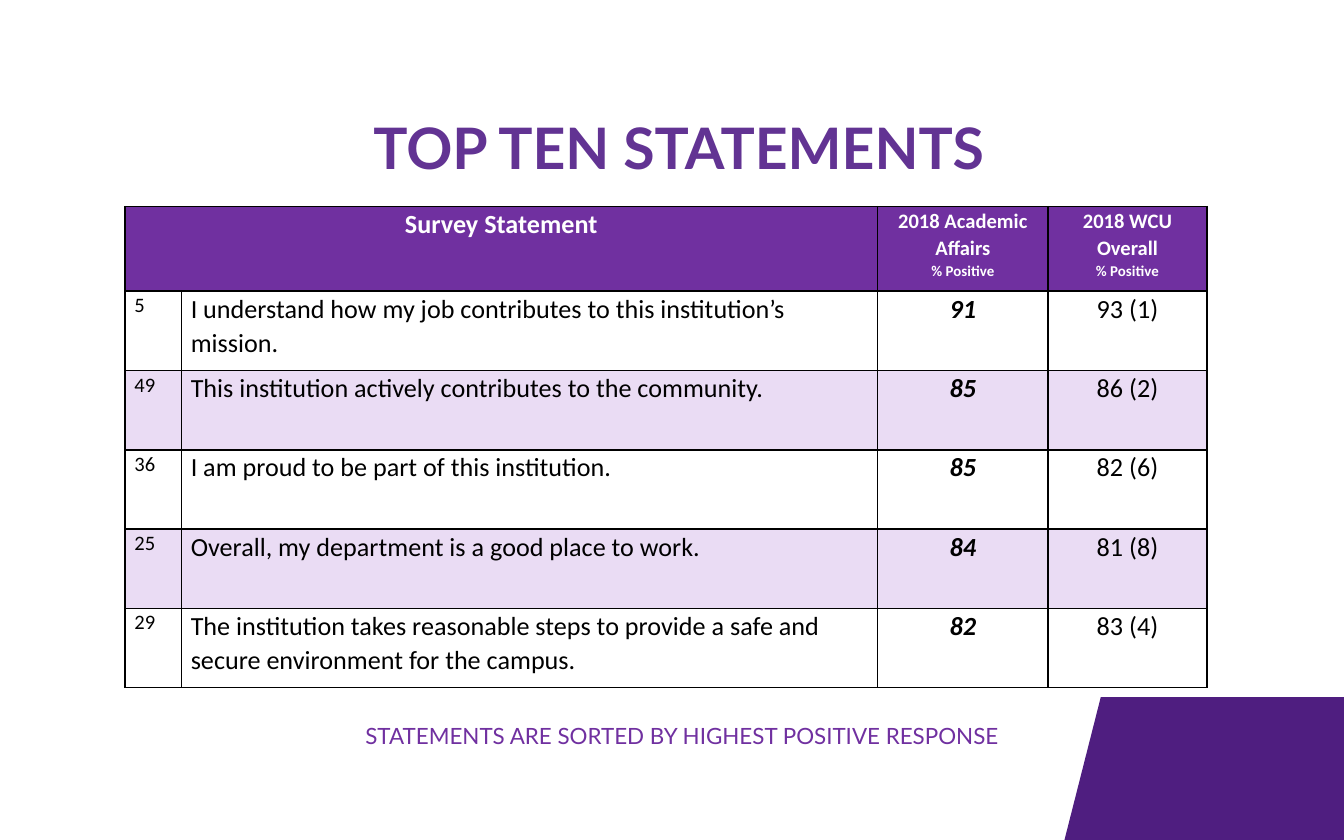
from lxml.etree import SubElement
from pptx import Presentation
from pptx.dml.color import RGBColor
from pptx.enum.text import MSO_ANCHOR, PP_ALIGN
from pptx.oxml.ns import qn
from pptx.util import Inches, Pt

WIDTH, HEIGHT = Inches(10), Inches(6.25)
COLUMN_WIDTHS = (0.42, 5.18, 1.27, 1.18)
HEADER_HEIGHT, ROW_HEIGHT = 0.63, 0.59
PURPLE, LILAC, WHITE, BLACK = "7030A0", "EADCF4", "FFFFFF", "000000"
SCORE_HEADINGS = ("2018 Academic Affairs", "2018 WCU Overall")
STATEMENTS = (
    ("5", "I understand how my job contributes to this institution’s mission.", "91", "93 (1)"),
    ("49", "This institution actively contributes to the community.", "85", "86 (2)"),
    ("36", "I am proud to be part of this institution.", "85", "82 (6)"),
    ("25", "Overall, my department is a good place to work.", "84", "81 (8)"),
    ("29", "The institution takes reasonable steps to provide a safe and secure environment for the campus.",
     "82", "83 (4)"),
)


def paint(color_format, color):
    """Set a colour from a hex string."""
    color_format.rgb = RGBColor.from_string(color)


def box(left, top, width, height):
    """Turn shares of the slide's size into a box of lengths."""
    return round(left * WIDTH), round(top * HEIGHT), round(width * WIDTH), round(height * HEIGHT)


def place(shape, area):
    """Move a shape to the given box."""
    shape.left, shape.top, shape.width, shape.height = area


def write(paragraph, words, size, color, font="Calibri", bold=False, italic=False,
          align=PP_ALIGN.LEFT, spacing=1.07):
    """Add one formatted run to a paragraph."""
    paragraph.alignment = align
    paragraph.line_spacing = spacing
    paragraph.space_before = paragraph.space_after = Pt(0)
    run = paragraph.add_run()
    run.text = words
    run.font.name, run.font.size = font, Pt(size)
    run.font.bold, run.font.italic = bold, italic
    paint(run.font.color, color)


def format_cell(cell, color):
    """Give a cell its margins, black borders and fill."""
    cell.margin_left = cell.margin_right = Inches(0.07)
    cell.margin_top = cell.margin_bottom = 0
    properties = cell._tc.get_or_add_tcPr()
    for side in ("a:lnL", "a:lnR", "a:lnT", "a:lnB"):
        line = SubElement(properties, qn(side), w=str(Pt(1)))
        fill = SubElement(line, qn("a:solidFill"))
        SubElement(fill, qn("a:srgbClr"), val=BLACK)
    cell.fill.solid()
    paint(cell.fill.fore_color, color)


def add_corner(slide, area):
    """Draw the slanted block that fills the lower right corner."""
    left, top, width, height = area
    right, bottom = left + width, top + height
    builder = slide.shapes.build_freeform(left + round(0.13 * width), top)
    builder.add_line_segments([(right, top), (right, bottom), (left, bottom)], close=True)
    corner = builder.convert_to_shape()
    corner.shadow.inherit = False
    corner.fill.solid()
    paint(corner.fill.fore_color, "4F1E80")
    corner.line.fill.background()


def add_title(slide, area):
    """Place and format the title."""
    title = slide.shapes.title
    place(title, area)
    title.text_frame.vertical_anchor = MSO_ANCHOR.MIDDLE
    write(title.text_frame.paragraphs[0], "TOP TEN STATEMENTS", 30.6, "623393", "Lato",
          bold=True, align=PP_ALIGN.CENTER, spacing=Pt(30))


def add_statements(slide, area):
    """Build the table of statements and scores."""
    table = slide.shapes.add_table(len(STATEMENTS) + 1, len(COLUMN_WIDTHS), *area).table
    for column, width in zip(table.columns, COLUMN_WIDTHS):
        column.width = Inches(width)
    for index, row in enumerate(table.rows):
        row.height = Inches(ROW_HEIGHT if index else HEADER_HEIGHT)
        color = (LILAC if index % 2 == 0 else WHITE) if index else PURPLE
        for cell in row.cells:
            format_cell(cell, color)

    table.cell(0, 0).merge(table.cell(0, 1))
    heading_style = {"color": WHITE, "bold": True, "align": PP_ALIGN.CENTER}
    write(table.cell(0, 0).text_frame.paragraphs[0], "Survey Statement", 14, **heading_style)
    for column, heading in enumerate(SCORE_HEADINGS, 2):
        frame = table.cell(0, column).text_frame
        write(frame.paragraphs[0], heading, 11, **heading_style)
        write(frame.add_paragraph(), "% Positive", 8, **heading_style)

    for row, statement in enumerate(STATEMENTS, 1):
        for column, words in enumerate(statement):
            write(table.cell(row, column).text_frame.paragraphs[0], words,
                  14 if column else 11, BLACK, bold=column == 2, italic=column == 2,
                  align=PP_ALIGN.CENTER if column > 1 else PP_ALIGN.LEFT)


def add_sorting_note(slide, area):
    """Add the note on sorting below the table."""
    note = slide.shapes.add_textbox(*area).text_frame
    note.word_wrap = True
    write(note.paragraphs[0], "STATEMENTS ARE SORTED BY HIGHEST POSITIVE RESPONSE", 12,
          PURPLE, "Lato", spacing=Pt(34))


def main():
    """Build and save the slide."""
    presentation = Presentation()
    presentation.slide_width, presentation.slide_height = WIDTH, HEIGHT
    slide = presentation.slides.add_slide(presentation.slide_layouts[5])
    add_corner(slide, box(0.792, 0.83, 0.208, 0.17))
    add_title(slide, box(0.04, 0.09, 0.93, 0.184))
    add_statements(slide, box(0.093, 0.246, 0.805, 0.573))
    add_sorting_note(slide, box(0.262, 0.808, 0.524, 0.08))
    presentation.save("out.pptx")


if __name__ == "__main__":
    main()
